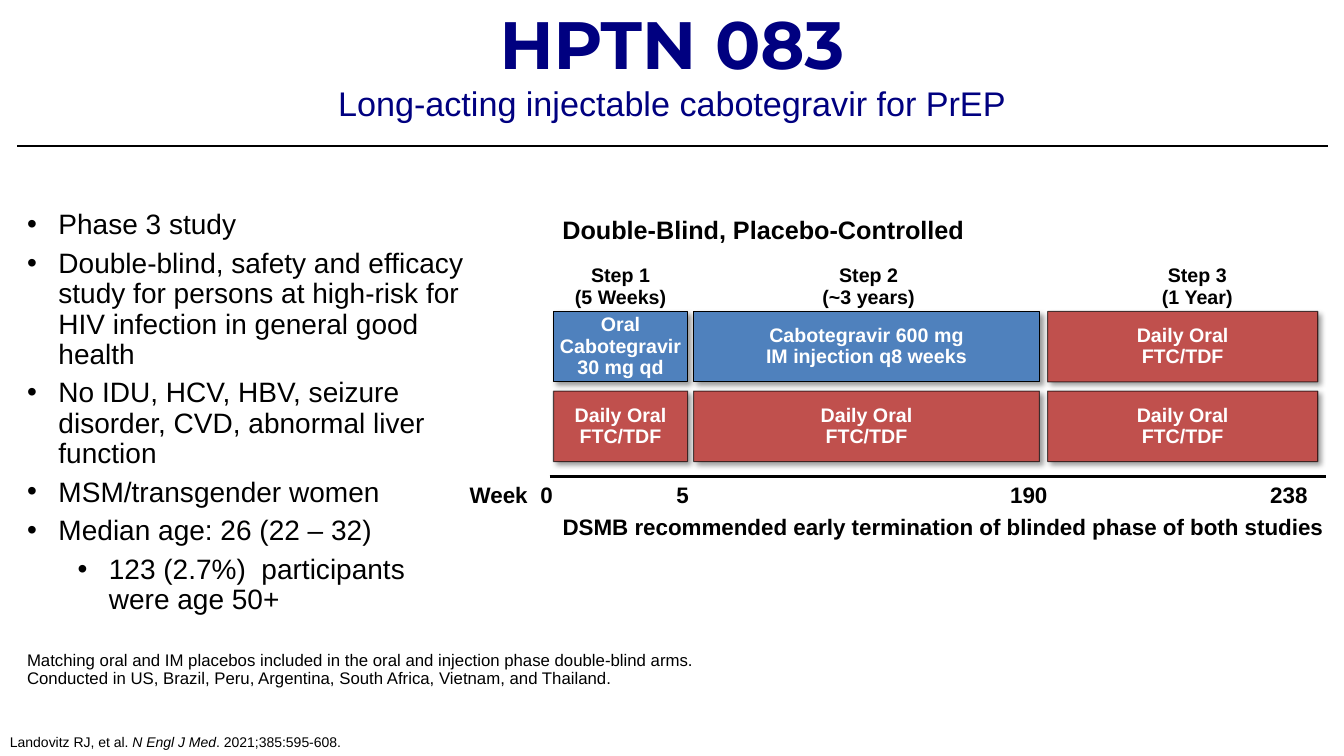
from dataclasses import dataclass
from pptx import Presentation
from pptx.dml.color import RGBColor
from pptx.enum.shapes import MSO_CONNECTOR, MSO_SHAPE
from pptx.enum.text import MSO_ANCHOR, MSO_AUTO_SIZE, PP_ALIGN
from pptx.oxml.ns import qn
from pptx.util import Pt
from lxml.etree import SubElement


@dataclass(frozen=True)
class Theme:
    font: str = "Arial"
    title_font: str = "Montserrat"
    navy: str = "000080"
    black: str = "000000"
    white: str = "FFFFFF"
    blue: str = "4F81BD"
    red: str = "C0504D"
    title: float = 47.8
    subtitle: float = 24.4
    bullet: int = 20
    heading: int = 18
    note: int = 16
    label: int = 14
    footnote: int = 12
    source: int = 10


T = Theme()
PX = 9144

TITLE = ["HPTN 083", "Long-acting injectable cabotegravir for PrEP"]
BULLETS = [
    (0, "Phase 3 study"),
    (0, "Double-blind, safety and efficacy study for persons at high-risk for HIV infection in general good health"),
    (0, "No IDU, HCV, HBV, seizure disorder, CVD, abnormal liver function"),
    (0, "MSM/transgender women"),
    (0, "Median age: 26 (22 – 32)"),
    (1, "123 (2.7%)  participants were age 50+"),
]
HEADING = "Double-Blind, Placebo-Controlled"
CONTROL = ("Daily Oral\nFTC/TDF", T.red)
STEPS = [
    dict(label="Step 1\n(5 Weeks)", label_x=551, x=549, w=133,
         arms=[("Oral\nCabotegravir\n30 mg qd", T.blue), CONTROL]),
    dict(label="Step 2\n(~3 years)", label_x=797, x=688, w=343,
         arms=[("Cabotegravir 600 mg\nIM injection q8 weeks", T.blue), CONTROL]),
    dict(label="Step 3\n(1 Year)", label_x=1123, x=1039, w=268,
         arms=[CONTROL, CONTROL]),
]
WEEKS = [("0", 70), ("5", 205), ("190", 536), ("238", 794)]
CONCLUSION = "DSMB recommended early termination of blinded phase of both studies"
FOOTNOTE = ("Matching oral and IM placebos included in the oral and injection phase double-blind arms.\n"
            "Conducted in US, Brazil, Peru, Argentina, South Africa, Vietnam, and Thailand.")
CITATION = [("Landovitz RJ, et al. ", False), ("N Engl J Med", True), (". 2021;385:595-608.", False)]
RULES = [(545, 1315, 473, 2), (17, 1317, 145, 1.5)]
ARM_TOP, ARM_H, ARM_STEP = 309, 70, 79
LABEL_TOP, LABEL_W, LABEL_H = 259, 129, 53


def px(*values):
    return [v * PX for v in values]


def style(p, size, color=T.black, bold=False, align=PP_ALIGN.LEFT, font=T.font, spacing=0.9):
    p.alignment = align
    p.line_spacing = spacing
    for r in p.runs:
        r.font.name = font
        r.font.size = Pt(size)
        r.font.bold = bold
        r.font.color.rgb = RGBColor.from_string(color)


def place(s, x, y, w, h):
    s.left, s.top, s.width, s.height = px(x, y, w, h)


def add_text(slide, box, text, size, **look):
    tf = slide.shapes.add_textbox(*px(*box)).text_frame
    tf.word_wrap = True
    tf.text = text
    for p in tf.paragraphs:
        style(p, size, **look)
    return tf


def add_title(slide):
    s = slide.shapes.title
    place(s, 86, 0, 1161, 125)
    tf = s.text_frame
    tf.text = "\n".join(TITLE)
    tf.auto_size = MSO_AUTO_SIZE.NONE
    tf.vertical_anchor = MSO_ANCHOR.MIDDLE
    name, topic = tf.paragraphs
    style(name, T.title, T.navy, True, PP_ALIGN.CENTER, T.title_font, 1.0)
    style(topic, T.subtitle, T.navy, False, PP_ALIGN.CENTER, spacing=1.0)


def add_bullets(slide):
    s = slide.placeholders[1]
    place(s, 17, 204, 455, 416)
    tf = s.text_frame
    tf.text = "\n".join(text for _, text in BULLETS)
    tf.auto_size = MSO_AUTO_SIZE.NONE
    for p, (level, _) in zip(tf.paragraphs, BULLETS):
        p.level = level
        pPr = p._p.get_or_add_pPr()
        pPr.set("marL", str((31 + 50 * level) * PX))
        pPr.set("indent", str(-31 * PX))
        SubElement(pPr, qn("a:buFont"), typeface=T.font)
        SubElement(pPr, qn("a:buChar"), char="•")
        p.space_before = Pt(0)
        p.space_after = Pt(6)
        style(p, T.bullet)


def add_arm(slide, box, text, color):
    s = slide.shapes.add_shape(MSO_SHAPE.RECTANGLE, *px(*box))
    s.fill.solid()
    s.fill.fore_color.rgb = RGBColor.from_string(color)
    s.line.color.rgb = RGBColor.from_string(T.black)
    s.line.width = Pt(0.75)
    if color == T.red:
        SubElement(s._element.xpath("./p:spPr/a:ln//a:srgbClr")[0], qn("a:alpha"), val="65000")
    s.shadow.inherit = False
    effects = s._element.spPr.find(qn("a:effectLst"))
    shadow = SubElement(effects, qn("a:outerShdw"), blurRad=str(Pt(4)), dist=str(Pt(3)),
                        dir="2700000", algn="tl", rotWithShape="0")
    SubElement(SubElement(shadow, qn("a:srgbClr"), val=T.black), qn("a:alpha"), val="40000")
    tf = s.text_frame
    tf.margin_left = tf.margin_right = tf.margin_top = tf.margin_bottom = 0
    tf.vertical_anchor = MSO_ANCHOR.MIDDLE
    tf.word_wrap = True
    tf.text = text
    for p in tf.paragraphs:
        style(p, T.label, T.white, True, PP_ALIGN.CENTER)


def add_weeks(slide):
    text = "\t".join(["Week"] + [week for week, _ in WEEKS])
    tf = add_text(slide, (456, 475, 875, 34), text, T.note, bold=True)
    tabs = SubElement(tf.paragraphs[0]._p.get_or_add_pPr(), qn("a:tabLst"))
    for _, x in WEEKS:
        SubElement(tabs, qn("a:tab"), pos=str(x * PX), algn="l")


def add_citation(slide):
    tf = add_text(slide, (0, 725, 1275, 25), "", T.source)
    p = tf.paragraphs[0]
    for text, italic in CITATION:
        r = p.add_run()
        r.text = text
        r.font.italic = italic
    style(p, T.source)


def add_rule(slide, x1, x2, y, width):
    s = slide.shapes.add_connector(MSO_CONNECTOR.STRAIGHT, *px(x1, y, x2, y))
    s.line.color.rgb = RGBColor.from_string(T.black)
    s.line.width = Pt(width)
    SubElement(s._element.spPr, qn("a:effectLst"))


def main():
    prs = Presentation()
    prs.slide_width, prs.slide_height = px(1333, 750)
    slide = prs.slides.add_slide(prs.slide_layouts[1])
    add_title(slide)
    add_bullets(slide)
    add_text(slide, (548, 211, 483, 37), HEADING, T.heading, bold=True)
    for step in STEPS:
        add_text(slide, (step["label_x"], LABEL_TOP, LABEL_W, LABEL_H), step["label"],
                 T.label, bold=True, align=PP_ALIGN.CENTER)
        for row, (text, color) in enumerate(step["arms"]):
            add_arm(slide, (step["x"], ARM_TOP + row * ARM_STEP, step["w"], ARM_H), text, color)
    add_weeks(slide)
    add_text(slide, (543, 507, 785, 75), CONCLUSION, T.note, bold=True, align=PP_ALIGN.CENTER)
    add_text(slide, (17, 642, 1026, 46), FOOTNOTE, T.footnote)
    add_citation(slide)
    for rule in RULES:
        add_rule(slide, *rule)
    prs.save("out.pptx")


if __name__ == "__main__":
    main()
